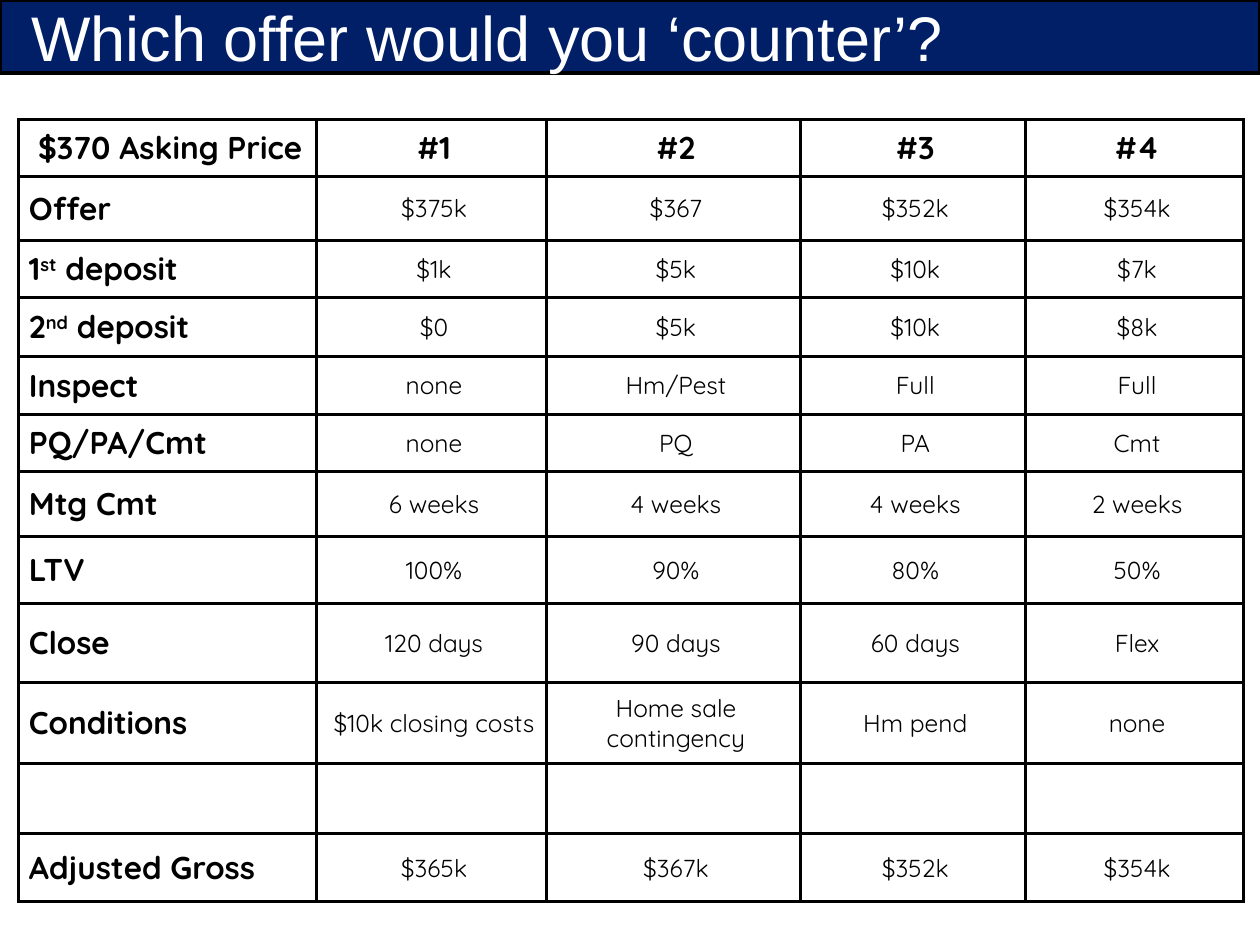
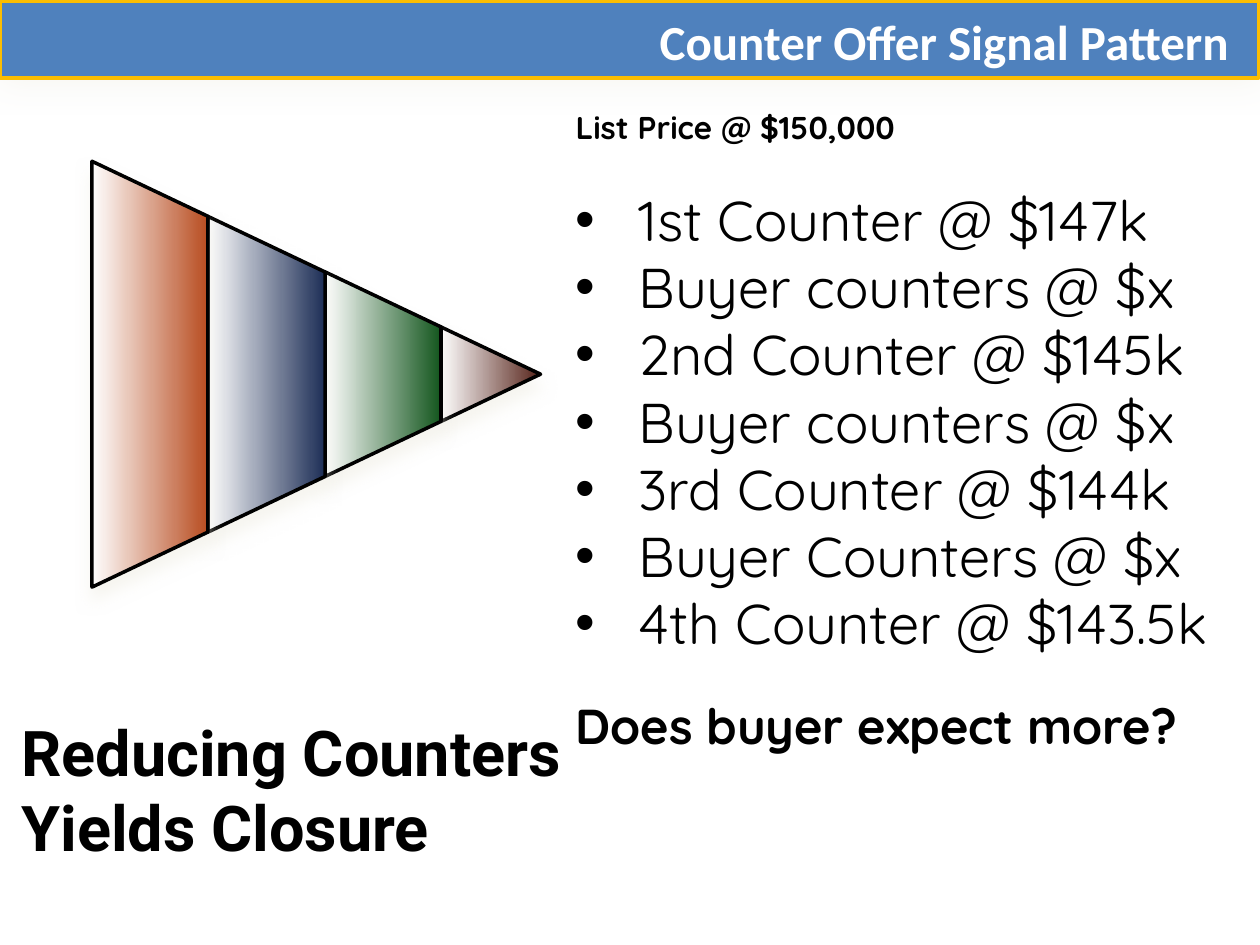
from dataclasses import dataclass

from pptx import Presentation
from pptx.dml.color import RGBColor
from pptx.enum.shapes import MSO_SHAPE
from pptx.enum.text import MSO_ANCHOR, MSO_AUTO_SIZE, PP_ALIGN
from pptx.oxml import parse_xml
from pptx.oxml.ns import nsdecls, qn
from pptx.util import Inches, Pt

RECT = MSO_SHAPE.RECTANGLE
MIDDLE, TOP = MSO_ANCHOR.MIDDLE, MSO_ANCHOR.TOP
FIXED = MSO_AUTO_SIZE.NONE
LEFT, CENTER, RIGHT = PP_ALIGN.LEFT, PP_ALIGN.CENTER, PP_ALIGN.RIGHT

COLORS = {
    "black": "000000", "white": "FFFFFF", "navy": "001F67", "blue": "4F81BD",
    "gold": "FCBD00", "shade": "EEECE1", "rust": "B84D21", "ink": "1D2E56",
    "green": "14561E", "brown": "56231A",
}
BODY = "Quicksand"
LINE = Pt(2)


@dataclass
class Box:
    left: float
    top: float
    width: float
    height: float

    def emu(self) -> list:
        return [Inches(v) for v in (self.left, self.top, self.width, self.height)]


@dataclass
class Shadow:
    alpha: int
    blur: int
    dist: int
    angle: int


@dataclass
class Header:
    text: str
    band: Box
    fill: str
    line: str
    box: Box
    font: str
    size: int
    bold: bool = False
    align: PP_ALIGN = LEFT
    shadow: Shadow | None = None


# Content
OFFERS = Header("Which offer would you ‘counter’?", Box(0, 0, 10, 0.58), "navy", "black",
                Box(0.25, -0.04, 9.51, 0.65), "Arial", 36)
SIGNAL = Header("Counter Offer Signal Pattern", Box(0, 0.01, 9.99, 0.61), "blue", "gold",
                Box(3.93, 0.06, 5.82, 0.53), "Calibri", 28, True, RIGHT, Shadow(55, 20, 0, 0))

GRID = Box(0.15, 0.95, 9.72, 6.21)
COLS = [2.36, 1.83, 2.01, 1.79, 1.73]
ROWS = [  # height, then cells; ^ marks superscript
    (0.45, "$370 Asking Price", "#1", "#2", "#3", "#4"),
    (0.51, "Offer", "$375k", "$367", "$352k", "$354k"),
    (0.45, "1^st^ deposit", "$1k", "$5k", "$10k", "$7k"),
    (0.47, "2^nd^ deposit", "$0", "$5k", "$10k", "$8k"),
    (0.46, "Inspect", "none", "Hm/Pest", "Full", "Full"),
    (0.45, "PQ/PA/Cmt", "none", "PQ", "PA", "Cmt"),
    (0.52, "Mtg Cmt", "6 weeks", "4 weeks", "4 weeks", "2 weeks"),
    (0.53, "LTV", "100%", "90%", "80%", "50%"),
    (0.63, "Close", "120 days", "90 days", "60 days", "Flex"),
    (0.64, "Conditions", "$10k closing costs", "Home sale contingency", "Hm pend", "none"),
    (0.56, "", "", "", "", ""),
    (0.54, "Adjusted Gross", "$365k", "$367k", "$352k", "$354k"),
]

STEPS = [
    "1st Counter @ $147k", "Buyer counters @ $x", "2nd Counter @ $145k",
    "Buyer counters @ $x", "3rd Counter @ $144k", "Buyer Counters @ $x",
    "4th Counter @ $143.5k",
]
EDGES = [0.73, 1.65, 2.58, 3.5, 4.29]
TINTS = ["rust", "ink", "green", "brown"]
AXIS, HALF = 2.97, 1.69  # height of the tip, half the base
GLOW = Shadow(50, 9, 7, 90)


def rgb(name: str) -> RGBColor:
    return RGBColor.from_string(COLORS[name])


def write(para, text: str, *, font: str = BODY, size: float = 18, bold: bool = False,
          color: str = "black", align: PP_ALIGN = LEFT, before: float = 0,
          margin: float = 0, bullet: bool = False) -> None:
    """Fill a paragraph; parts between ^ marks are superscript."""
    para.alignment = align
    para.space_before = Pt(before)
    props = para._p.get_or_add_pPr()
    props.set("marL", str(Inches(margin)))
    props.set("indent", str(-Inches(margin) if bullet else 0))
    if bullet:
        props.append(parse_xml(f'<a:buFont {nsdecls("a")} typeface="Arial"/>'))
        props.append(parse_xml(f'<a:buChar {nsdecls("a")} char="•"/>'))
    for i, part in enumerate(text.split("^")):
        run = para.add_run()
        run.text = part
        run.font.name, run.font.size, run.font.bold = font, Pt(size), bold
        run.font.color.rgb = rgb(color)
        if i % 2:
            run.font._element.set("baseline", "29000")


def frame(shape, anchor: MSO_ANCHOR = MIDDLE, pad: tuple = (0, 0)):
    """Set the text frame's insets (side, top) and anchor."""
    text = shape.text_frame
    text.word_wrap, text.auto_size, text.vertical_anchor = True, FIXED, anchor
    text.margin_left = text.margin_right = Inches(pad[0])
    text.margin_top = text.margin_bottom = Inches(pad[1])
    return text


def shade(shape, shadow: Shadow | None) -> None:
    shape.shadow.inherit = False
    if shadow:
        effects = shape.element.spPr.find(qn("a:effectLst"))
        effects.append(parse_xml(
            f'<a:outerShdw {nsdecls("a")} blurRad="{Pt(shadow.blur)}" dist="{Pt(shadow.dist)}" '
            f'dir="{shadow.angle * 60000}" rotWithShape="0"><a:srgbClr val="{COLORS["shade"]}">'
            f'<a:alpha val="{shadow.alpha * 1000}"/></a:srgbClr></a:outerShdw>'))


def outline(shape, color: str) -> None:
    shape.line.color.rgb = rgb(color)
    shape.line.width = LINE


def start(deck, head: Header):
    """Add a slide with its band and title."""
    slide = deck.slides.add_slide(deck.slide_layouts[5])
    band = slide.shapes.add_shape(RECT, *head.band.emu())
    band.fill.solid()
    band.fill.fore_color.rgb = rgb(head.fill)
    outline(band, head.line)
    shade(band, head.shadow)
    title = slide.shapes.title
    title.left, title.top, title.width, title.height = head.box.emu()
    write(frame(title).paragraphs[0], head.text, font=head.font, size=head.size,
          bold=head.bold, color="white", align=head.align)
    slide.shapes.element.append(title.element)  # title above band
    return slide


def border(cell) -> None:
    props = cell._tc.get_or_add_tcPr()
    for i, side in enumerate(("lnL", "lnR", "lnT", "lnB")):
        props.insert(i, parse_xml(
            f'<a:{side} {nsdecls("a")} w="{LINE}"><a:solidFill>'
            f'<a:srgbClr val="{COLORS["black"]}"/></a:solidFill></a:{side}>'))


def grid(slide) -> None:
    table = slide.shapes.add_table(len(ROWS), len(COLS), *GRID.emu()).table
    table.first_row = table.horz_banding = False
    for col, width in zip(table.columns, COLS):
        col.width = Inches(width)
    for r, (height, *texts) in enumerate(ROWS):
        table.rows[r].height = Inches(height)
        for c, text in enumerate(texts):
            cell = table.cell(r, c)
            cell.fill.background()
            border(cell)
            cell.vertical_anchor = MIDDLE
            cell.margin_left = cell.margin_right = Inches(0.04)
            cell.margin_top = cell.margin_bottom = Inches(0.04)
            if text:
                strong = r == 0 or c == 0
                write(cell.text_frame.paragraphs[0], text, size=18 if strong else 14,
                      bold=strong, align=LEFT if r and c == 0 else CENTER, margin=0.04)


def funnel(slide) -> None:
    """Cut a triangle pointing right into gradient slices, tip at the back."""
    group = slide.shapes.add_group_shape()
    tip = EDGES[-1]
    slope = HALF / (tip - EDGES[0])
    for x1, x2, tint in reversed(list(zip(EDGES, EDGES[1:], TINTS))):
        h1, h2 = slope * (tip - x1), slope * (tip - x2)
        pen = group.shapes.build_freeform(Inches(x1), Inches(AXIS - h1))
        pen.add_line_segments([(Inches(x), Inches(y)) for x, y in (
            (x2, AXIS - h2), (x2, AXIS + h2), (x1, AXIS + h1))])
        part = pen.convert_to_shape()
        part.fill.gradient()
        part.fill.gradient_angle = 0
        for stop, color, spot in zip(part.fill.gradient_stops, ("white", tint), (0, 1)):
            stop.color.rgb, stop.position = rgb(color), spot
        outline(part, "black")
        shade(part, GLOW)


def label(slide, box: Box, **style):
    return frame(slide.shapes.add_textbox(*box.emu()), **style)


def main() -> None:
    deck = Presentation()
    deck.slide_width, deck.slide_height = Inches(10), Inches(7.5)

    # Offer comparison
    grid(start(deck, OFFERS))

    # Shrinking counters
    slide = start(deck, SIGNAL)
    motto = label(slide, Box(0.17, 5.19, 4.31, 2.14))
    write(motto.paragraphs[0], "Reducing Counters Yields Closure",
          font="Roboto", size=36, bold=True)
    funnel(slide)
    notes = label(slide, Box(4.47, 0.81, 5.51, 5.25), anchor=TOP, pad=(0.1, 0.05))
    write(notes.paragraphs[0], "List Price @ $150,000", bold=True)
    for i, step in enumerate(STEPS):
        write(notes.add_paragraph(), step, size=32, margin=0.5, bullet=True,
              before=0 if i else 22.5)
    write(notes.add_paragraph(), "Does buyer expect more?", size=28, bold=True, before=22.5)

    deck.save("out.pptx")


if __name__ == "__main__":
    main()
